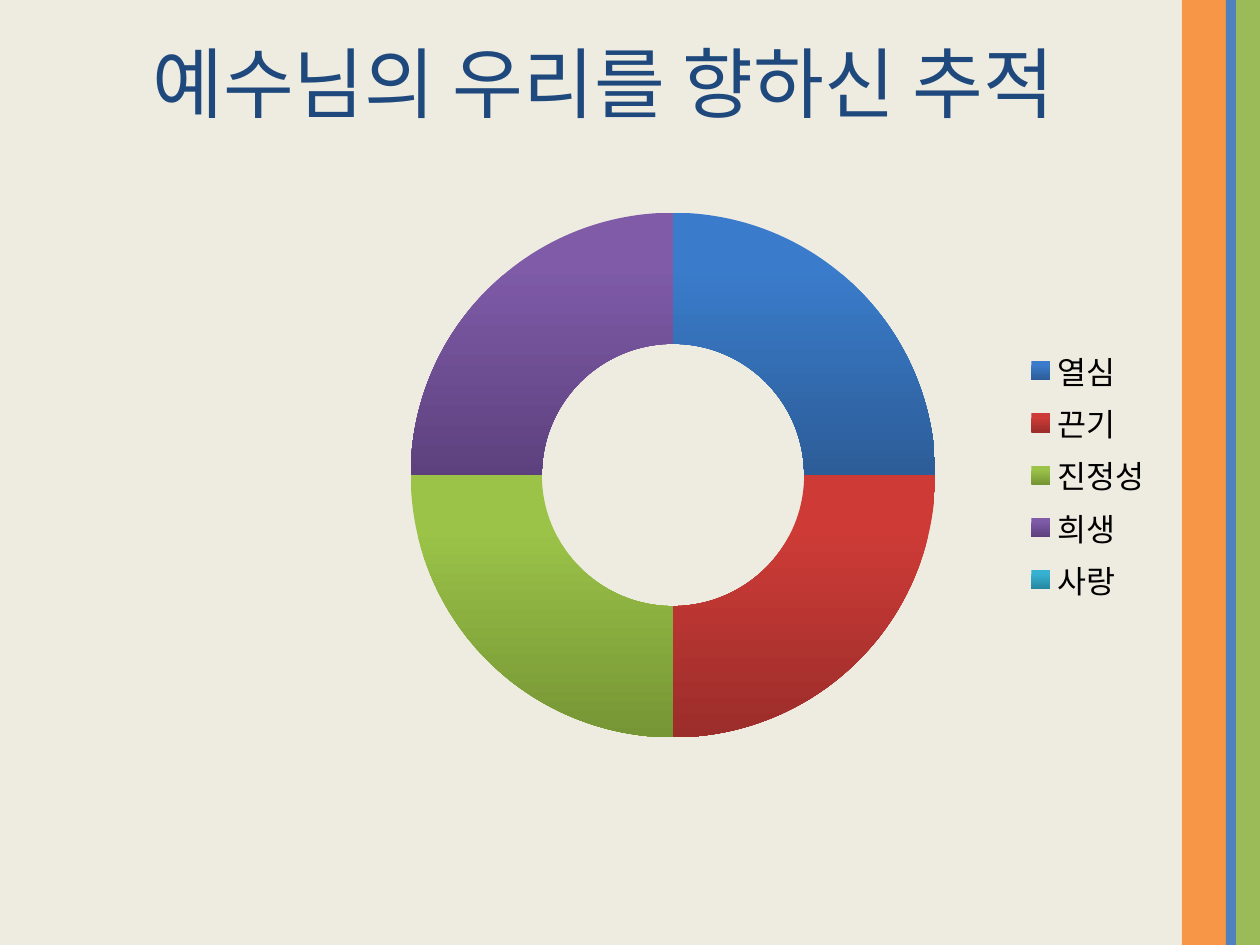
from pptx import Presentation
from pptx.chart.data import CategoryChartData
from pptx.dml.color import RGBColor
from pptx.enum.chart import XL_CHART_TYPE, XL_LEGEND_POSITION
from pptx.enum.shapes import MSO_SHAPE
from pptx.enum.text import MSO_ANCHOR, PP_ALIGN
from pptx.util import Inches, Pt

DOUGHNUT = XL_CHART_TYPE.DOUGHNUT
RIGHT = XL_LEGEND_POSITION.RIGHT
RECTANGLE = MSO_SHAPE.RECTANGLE
MIDDLE = MSO_ANCHOR.MIDDLE
CENTER = PP_ALIGN.CENTER

FONT = "Calibri"
WIDTH, HEIGHT = 10, 7.5
COLORS = {
    "background": "EEECE1",
    "title": "1F497D",
    "legend": "000000",
    "orange": "F79646",
    "blue": "4F81BD",
    "green": "9BBB59",
}
STRIPES = [("orange", 0.35), ("blue", 0.08), ("green", 0.19)]
VIRTUES = [
    ("열심", 25, "3A7CCB", "2C5D98"),
    ("끈기", 25, "CE3B37", "9B2D2A"),
    ("진정성", 25, "9BC348", "769535"),
    ("희생", 25, "7F5BA8", "5D417E"),
    ("사랑", None, "36B1D2", "2787A0"),
]


def color(name):
    return RGBColor.from_string(COLORS[name])


def add_stripes(slide, box):
    left, top, width, height = box
    total = sum(share for _, share in STRIPES)
    for name, share in STRIPES:
        stripe_width = width * share / total
        stripe = slide.shapes.add_shape(
            RECTANGLE, Inches(left), Inches(top), Inches(stripe_width), Inches(height)
        )
        stripe.shadow.inherit = False
        stripe.fill.solid()
        stripe.fill.fore_color.rgb = color(name)
        stripe.line.fill.background()
        left += stripe_width


def add_title(slide, box):
    frame = slide.shapes.add_textbox(*map(Inches, box)).text_frame
    frame.word_wrap = True
    frame.vertical_anchor = MIDDLE
    heading = frame.paragraphs[0]
    heading.alignment = CENTER
    words = heading.add_run()
    words.text = "예수님의 우리를 향하신 추적"
    words.font.name = FONT
    words.font.size = Pt(44)
    words.font.color.rgb = color("title")


def add_virtue_ring(slide, box):
    data = CategoryChartData()
    data.categories = [virtue[0] for virtue in VIRTUES]
    data.add_series("Series 1", [virtue[1] for virtue in VIRTUES])
    chart = slide.shapes.add_chart(DOUGHNUT, *map(Inches, box), data).chart
    chart.has_title = False
    chart.font.name = FONT
    chart.font.size = Pt(18)
    chart.font.color.rgb = color("legend")
    chart.has_legend = True
    chart.legend.position = RIGHT
    chart.legend.include_in_layout = False
    ring = chart.plots[0]
    ring.vary_by_categories = True
    for index, (_, _, light, dark) in enumerate(VIRTUES):
        segment = ring.series[0].points[index].format
        segment.line.fill.background()
        segment.fill.gradient()
        segment.fill.gradient_angle = 270
        for stop, shade, position in zip(segment.fill.gradient_stops, (light, dark), (0.2, 1)):
            stop.color.rgb = RGBColor.from_string(shade)
            stop.position = position


def main():
    deck = Presentation()
    deck.slide_width, deck.slide_height = Inches(WIDTH), Inches(HEIGHT)
    slide = deck.slides.add_slide(deck.slide_layouts[6])
    slide.background.fill.solid()
    slide.background.fill.fore_color.rgb = color("background")
    band = sum(share for _, share in STRIPES)
    add_stripes(slide, (WIDTH - band, 0, band, HEIGHT))
    add_title(slide, (0.05 * WIDTH, 0.02, 0.858 * WIDTH, HEIGHT / 6))
    add_virtue_ring(slide, (2.58, 1.55, WIDTH * 2 / 3, 4.44))
    deck.save("out.pptx")


if __name__ == "__main__":
    main()
